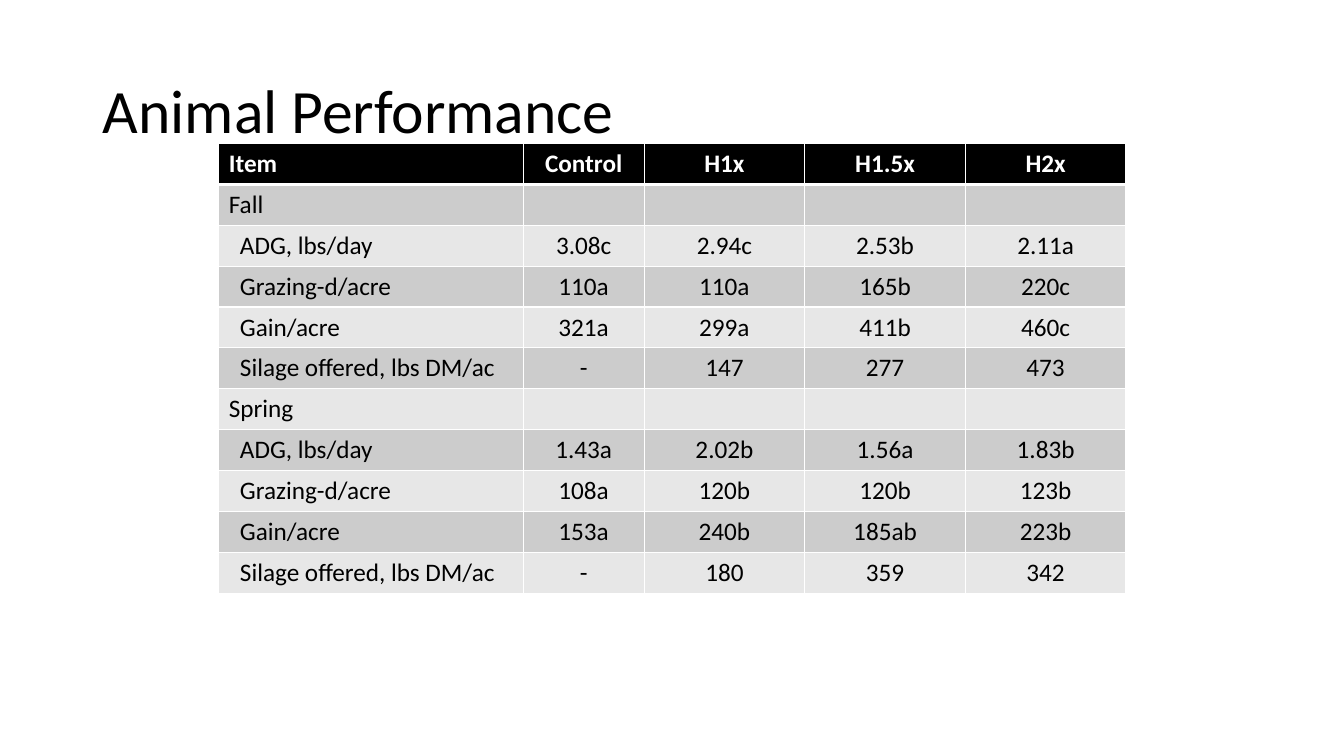
from lxml.etree import SubElement
from pptx import Presentation
from pptx.dml.color import RGBColor
from pptx.enum.text import MSO_ANCHOR as Anchor, MSO_AUTO_SIZE as AutoSize, PP_ALIGN as Align
from pptx.oxml.ns import qn
from pptx.util import Inches, Pt

HEADINGS = ["Item", "Control", "H1x", "H1.5x", "H2x"]
SEASONS = {
    "Fall": [
        ["ADG, lbs/day", "3.08c", "2.94c", "2.53b", "2.11a"],
        ["Grazing-d/acre", "110a", "110a", "165b", "220c"],
        ["Gain/acre", "321a", "299a", "411b", "460c"],
        ["Silage offered, lbs DM/ac", "-", "147", "277", "473"],
    ],
    "Spring": [
        ["ADG, lbs/day", "1.43a", "2.02b", "1.56a", "1.83b"],
        ["Grazing-d/acre", "108a", "120b", "120b", "123b"],
        ["Gain/acre", "153a", "240b", "185ab", "223b"],
        ["Silage offered, lbs DM/ac", "-", "180", "359", "342"],
    ],
}


def color(value):
    return RGBColor.from_string(value)


def write(frame, text, size=18, ink="000000", bold=False, align=Align.LEFT, spacing=1.0):
    paragraph = frame.paragraphs[0]
    paragraph.alignment = align
    paragraph.line_spacing = spacing
    font = paragraph.font if not text else paragraph.add_run().font
    if text:
        paragraph.runs[0].text = text
    font.name = "Calibri"
    font.size = Pt(size)
    font.bold = bold
    font.color.rgb = color(ink)


class PerformanceSlide:
    grid = 100
    ink, paper = "000000", "FFFFFF"
    bands = ("CCCCCC", "E7E7E7")
    margin, indent = Inches(0.1), Inches(0.11)

    def __init__(self, deck):
        self.column = deck.slide_width / self.grid
        self.row = deck.slide_height / self.grid
        self.slide = deck.slides.add_slide(deck.slide_layouts[5])

    def place(self, left, top, width, height):
        return (round(left * self.column), round(top * self.row),
                round(width * self.column), round(height * self.row))

    def title(self, text, *area):
        heading = self.slide.shapes.title
        heading.left, heading.top, heading.width, heading.height = self.place(*area)
        frame = heading.text_frame
        frame.word_wrap = True
        frame.auto_size = AutoSize.NONE
        frame.vertical_anchor = Anchor.MIDDLE
        write(frame, text, size=44, ink=self.ink, align=Align.LEFT, spacing=0.9)

    def borders(self, cell, top, bottom):
        properties = cell._tc.get_or_add_tcPr()
        for side, width in (("L", 1), ("R", 1), ("T", top), ("B", bottom)):
            line = SubElement(properties, qn(f"a:ln{side}"), w=str(Pt(width)))
            SubElement(SubElement(line, qn("a:solidFill")), qn("a:srgbClr"), val=self.paper)

    def cell(self, cell, text, row, column, indented):
        header = row == 0
        self.borders(cell, top=3 if row == 1 else 1, bottom=3 if header else 1)
        cell.fill.solid()
        cell.fill.fore_color.rgb = color(self.ink if header else self.bands[(row - 1) % 2])
        if indented:
            cell.margin_left = self.margin + self.indent
        write(cell.text_frame, text, bold=header, ink=self.paper if header else self.ink,
              align=Align.CENTER if column else Align.LEFT)

    def table(self, headings, seasons, left, top, widths, row_height):
        records = [(headings, False)]
        for season, measures in seasons.items():
            records.append(([season] + [""] * (len(headings) - 1), False))
            records += [(measure, True) for measure in measures]
        area = self.place(left, top, sum(widths), row_height * len(records))
        grid = self.slide.shapes.add_table(len(records), len(headings), *area).table
        for table_column, width in zip(grid.columns, widths):
            table_column.width = round(width * self.column)
        for row, (record, measured) in enumerate(records):
            grid.rows[row].height = round(row_height * self.row)
            for column, text in enumerate(record):
                self.cell(grid.cell(row, column), text, row, column, measured and column == 0)


def main():
    deck = Presentation()
    deck.slide_width, deck.slide_height = Inches(13.33), Inches(7.5)
    performance = PerformanceSlide(deck)
    performance.title("Animal Performance", 6.9, 5.33, 86.25, 19.33)
    performance.table(HEADINGS, SEASONS, left=16.28, top=18.98,
                      widths=[22.65, 9] + [11.95] * 3, row_height=5.41)
    deck.save("out.pptx")


if __name__ == "__main__":
    main()
